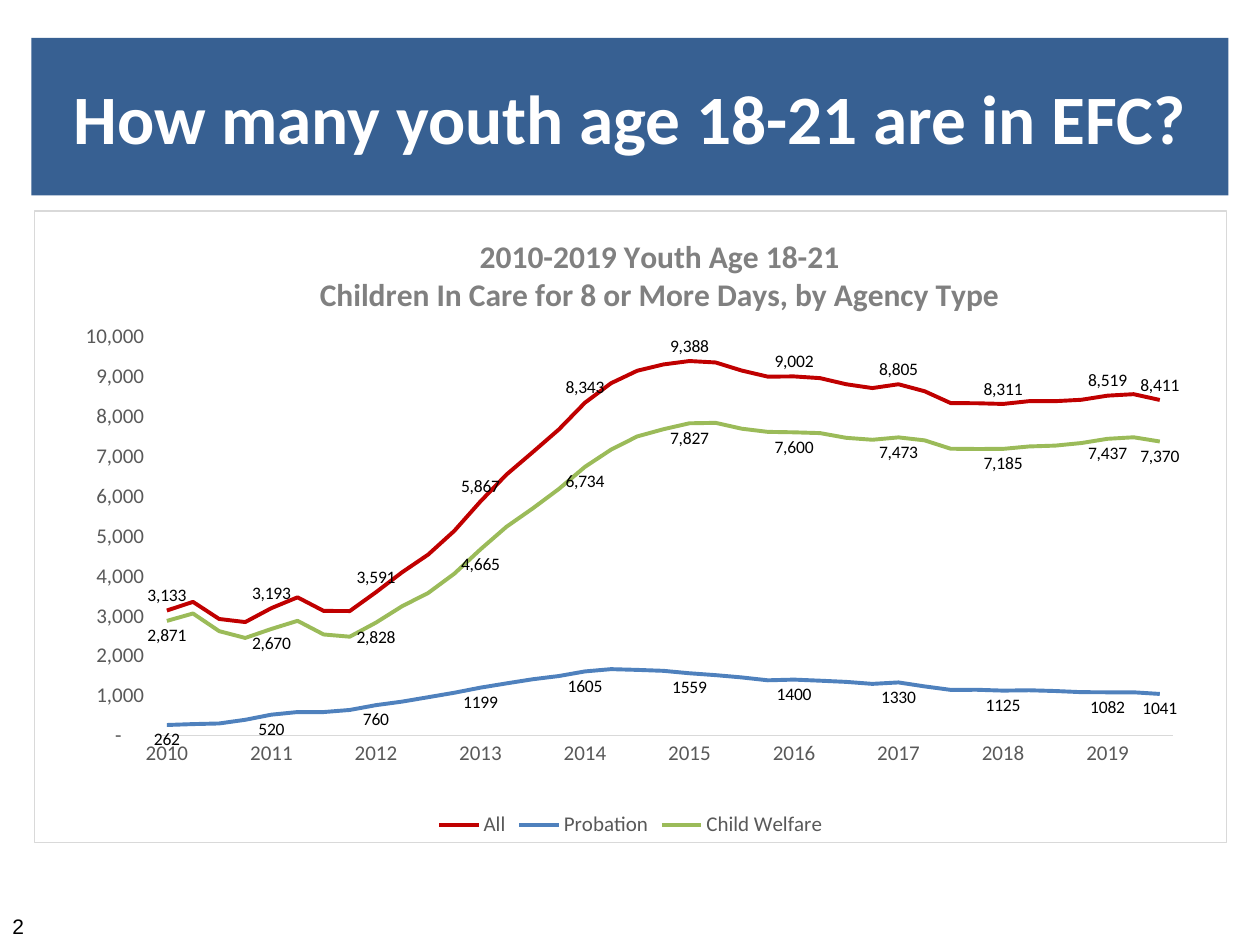
"""Build the slide on how many youth age 18-21 are in EFC."""
from dataclasses import dataclass

import pptx
import pptx.chart.data
import pptx.dml.color
import pptx.enum.chart
import pptx.enum.shapes
import pptx.enum.text
import pptx.oxml
import pptx.oxml.ns
import pptx.util

LabelPos = pptx.enum.chart.XL_LABEL_POSITION
Align = pptx.enum.text.PP_ALIGN
Anchor = pptx.enum.text.MSO_ANCHOR
COLS, ROWS = 40, 30


@dataclass(frozen=True)
class Theme:
    banner: str = "376092"
    white: str = "FFFFFF"
    black: str = "000000"
    axis: str = "595959"
    heading: str = "808080"
    rule: str = "D9D9D9"
    font: str = "Calibri"
    number_font: str = "Arial"
    title_size: float = 39.6
    heading_size: float = 18
    axis_size: float = 12
    label_size: float = 10
    rule_width: float = 0.75
    line_width: float = 2.25


@dataclass(frozen=True)
class Box:
    """Place on a grid of columns and rows."""
    col: float
    row: float
    cols: float
    rows: float

    def emu(self, prs) -> tuple:
        dx, dy = prs.slide_width / COLS, prs.slide_height / ROWS
        return tuple(round(n) for n in (self.col * dx, self.row * dy, self.cols * dx, self.rows * dy))


@dataclass(frozen=True)
class Line:
    name: str
    color: str
    number_format: str
    label_pos: LabelPos
    values: tuple


THEME = Theme()
YEARS = range(2010, 2020)
QUARTERS = 39
LABELLED = (*range(0, QUARTERS, 4), QUARTERS - 1)
LINES = (
    Line("All", "C00000", "#,##0", LabelPos.ABOVE, (
        3133, 3349, 2921, 2842, 3193, 3463, 3123, 3119, 3591, 4091, 4534, 5128, 5867,
        6542, 7102, 7671, 8343, 8831, 9143, 9301, 9388, 9352, 9148, 8996, 9002, 8958,
        8806, 8709, 8805, 8629, 8333, 8329, 8311, 8381, 8381, 8416, 8519, 8556, 8411)),
    Line("Probation", "4F81BD", "General", LabelPos.BELOW, (
        262, 285, 301, 393, 520, 587, 588, 640, 760, 848, 959, 1070, 1199,
        1306, 1409, 1490, 1605, 1662, 1644, 1620, 1559, 1512, 1455, 1383, 1400, 1373,
        1343, 1294, 1330, 1230, 1143, 1146, 1125, 1134, 1114, 1085, 1082, 1081, 1041)),
    Line("Child Welfare", "9BBB59", "#,##0", LabelPos.BELOW, (
        2871, 3059, 2616, 2446, 2670, 2873, 2532, 2476, 2828, 3240, 3572, 4055, 4665,
        5233, 5690, 6178, 6734, 7166, 7496, 7678, 7827, 7838, 7691, 7612, 7600, 7580,
        7461, 7413, 7473, 7398, 7189, 7182, 7185, 7246, 7267, 7331, 7437, 7475, 7370)),
)


def rgb(color: str):
    return pptx.dml.color.RGBColor.from_string(color)


def set_font(font, size: float, color: str, bold: bool = False, name: str = THEME.font) -> None:
    font.name, font.size, font.bold = name, pptx.util.Pt(size), bold
    font.color.rgb = rgb(color)


def set_line(line, color: str, width: float) -> None:
    line.color.rgb, line.width = rgb(color), pptx.util.Pt(width)


def add_banner(prs, s, box: Box, text: str) -> None:
    sp = s.shapes.add_shape(pptx.enum.shapes.MSO_SHAPE.RECTANGLE, *box.emu(prs))
    sp.shadow.inherit = False
    sp.fill.solid()
    sp.fill.fore_color.rgb = rgb(THEME.banner)
    sp.line.fill.background()
    tf = sp.text_frame
    tf.text, tf.word_wrap, tf.vertical_anchor = text, True, Anchor.MIDDLE
    p = tf.paragraphs[0]
    p.alignment = Align.CENTER
    set_font(p.font, THEME.title_size, THEME.white, True)


def add_page_number(prs, s, box: Box, text: str) -> None:
    tf = s.shapes.add_textbox(*box.emu(prs)).text_frame
    tf.text, tf.word_wrap = text, False
    set_font(tf.paragraphs[0].font, THEME.axis_size, THEME.black, name=THEME.number_font)


def set_layout(parent, index: int, target: str = "", **shares: float) -> None:
    """Give a chart part a fixed place, in shares of the chart."""
    for old in parent.findall(pptx.oxml.ns.qn("c:layout")):
        parent.remove(old)
    inner = f'<c:layoutTarget val="{target}"/>' if target else ""
    inner += "".join(f'<c:{k}Mode val="edge"/>' for k in "xy")
    inner += "".join(f'<c:{k} val="{v}"/>' for k, v in shares.items())
    parent.insert(index, pptx.oxml.parse_xml(
        f'<c:layout {pptx.oxml.ns.nsdecls("c")}><c:manualLayout>{inner}</c:manualLayout></c:layout>'))


def frame_chart(chart) -> None:
    """Fill the chart area and draw its border."""
    chart.element.find(pptx.oxml.ns.qn("c:chart")).addnext(pptx.oxml.parse_xml(
        f'<c:spPr {pptx.oxml.ns.nsdecls("c", "a")}>'
        f'<a:solidFill><a:srgbClr val="{THEME.white}"/></a:solidFill>'
        f'<a:ln w="{pptx.util.Pt(THEME.rule_width)}"><a:solidFill>'
        f'<a:srgbClr val="{THEME.rule}"/></a:solidFill></a:ln></c:spPr>'))


def style_series(series, line: Line) -> None:
    series.smooth = False
    set_line(series.format.line, line.color, THEME.line_width)
    series.data_labels.show_value = False
    for i in LABELLED:
        series.points[i].data_label.position = line.label_pos


def keep_labels_whole(axis) -> None:
    """Show every category label on one line."""
    axis._element.txPr.bodyPr.set("rot", "-60000000")
    axis._element.find(pptx.oxml.ns.qn("c:noMultiLvlLbl")).addprevious(pptx.oxml.parse_xml(
        f'<c:tickLblSkip {pptx.oxml.ns.nsdecls("c")} val="1"/>'))


def style_axes(chart) -> None:
    cat, val = chart.category_axis, chart.value_axis
    for axis in (cat, val):
        axis.has_major_gridlines = False
        axis.major_tick_mark = axis.minor_tick_mark = pptx.enum.chart.XL_TICK_MARK.NONE
        set_font(axis.tick_labels.font, THEME.axis_size, THEME.axis)
    set_line(cat.format.line, THEME.rule, THEME.rule_width)
    keep_labels_whole(cat)
    val.format.line.fill.background()
    val.minimum_scale, val.maximum_scale, val.major_unit = 0, 10000, 1000
    val.tick_labels.number_format = r'_(* #,##0_);_(* \(#,##0\);_(* "-"??_);_('
    val.tick_labels.number_format_is_linked = False


def add_line_chart(prs, s, box: Box, heading: str) -> None:
    data = pptx.chart.data.CategoryChartData()
    data.categories = [str(YEARS[i // 4]) if i % 4 == 0 else "" for i in range(QUARTERS)]
    for line in LINES:
        data.add_series(line.name, line.values, line.number_format)
    chart = s.shapes.add_chart(pptx.enum.chart.XL_CHART_TYPE.LINE, *box.emu(prs), data).chart
    set_font(chart.font, THEME.label_size, THEME.black)
    frame_chart(chart)
    chart.plots[0].vary_by_categories = False
    for series, line in zip(chart.plots[0].series, LINES):
        style_series(series, line)
    style_axes(chart)
    chart.has_title = True
    title = chart.chart_title
    title.text_frame.text = heading
    for p in title.text_frame.paragraphs:
        p.alignment = Align.CENTER
        set_font(p.font, THEME.heading_size, THEME.heading, True)
    set_layout(title._element, 1, x=9.44 / COLS, y=1 / ROWS)
    plot_area = chart.element.find(".//" + pptx.oxml.ns.qn("c:plotArea"))
    set_layout(plot_area, 0, "inner", x=4 / COLS, y=5.97 / ROWS, w=34.2 / COLS, h=18.96 / ROWS)
    chart.has_legend = True
    chart.legend.position = pptx.enum.chart.XL_LEGEND_POSITION.BOTTOM
    chart.legend.include_in_layout = False
    set_font(chart.legend.font, THEME.axis_size, THEME.axis)


def main() -> None:
    prs = pptx.Presentation()
    prs.slide_width, prs.slide_height = pptx.util.Inches(10), pptx.util.Inches(7.5)
    s = prs.slides.add_slide(prs.slide_layouts[6])
    add_banner(prs, s, Box(1, 1.2, 38, 5), "How many youth age 18-21 are in EFC?")
    add_page_number(prs, s, Box(0, 28.8, 1.16, 1.2), "2")
    add_line_chart(prs, s, Box(1.08, 6.68, 37.88, 20.08),
                   "2010-2019 Youth Age 18-21\nChildren In Care for 8 or More Days, by Agency Type")
    prs.save("out.pptx")


if __name__ == "__main__":
    main()
